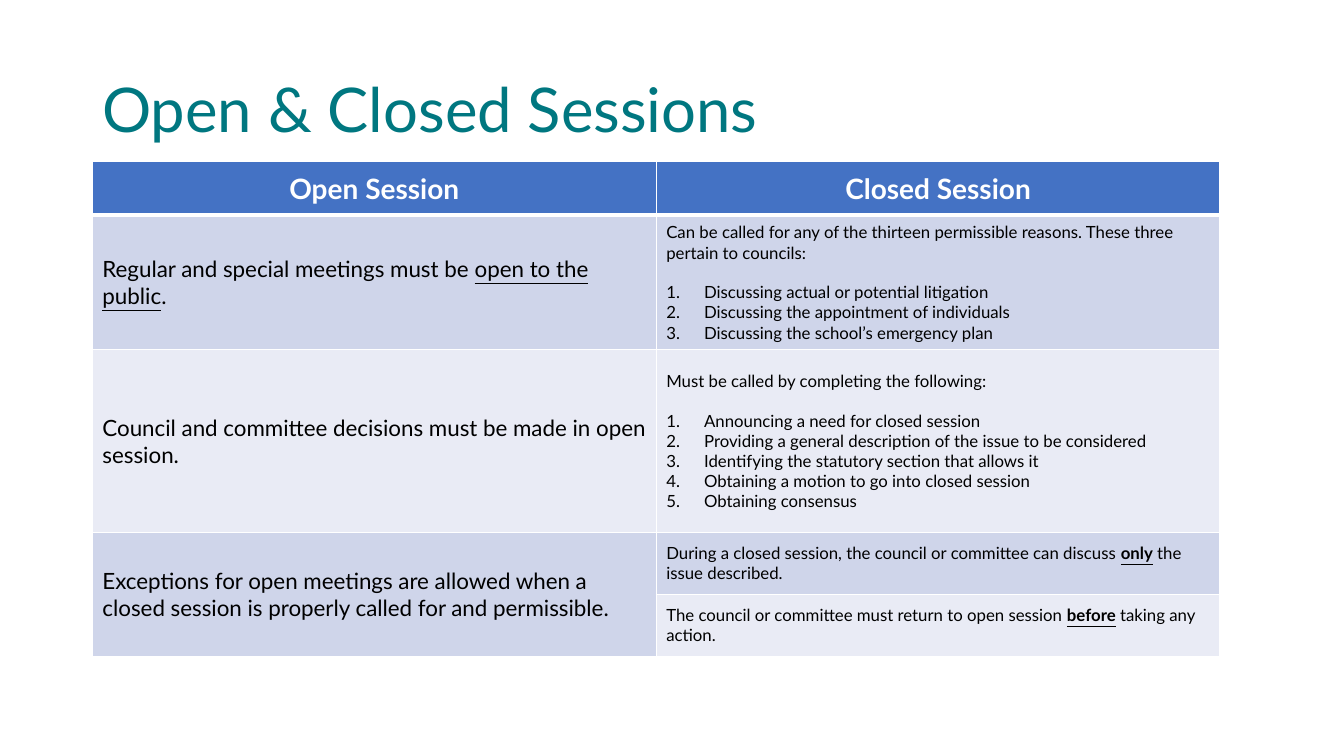
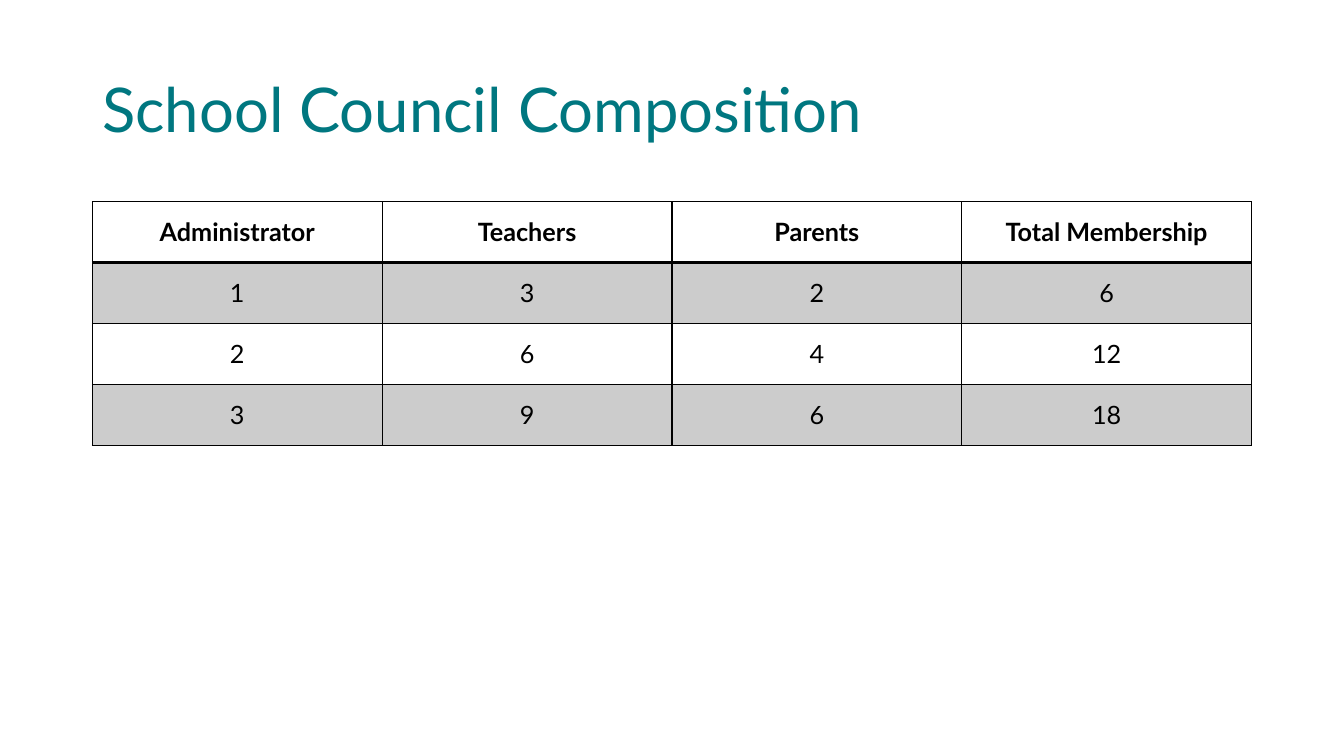
from dataclasses import dataclass

from lxml.etree import SubElement
from pptx import Presentation
from pptx.dml.color import RGBColor
from pptx.enum.text import MSO_VERTICAL_ANCHOR as Anchor, PP_PARAGRAPH_ALIGNMENT as Align
from pptx.oxml.ns import qn
from pptx.util import Pt

SCALE = 9525


@dataclass(frozen=True)
class Theme:
    """Hold the colours, typeface and type sizes."""
    font: str = "Lato"
    teal: str = "007780"
    black: str = "000000"
    white: str = "FFFFFF"
    header: str = "4472C4"
    band_dark: str = "CFD5EA"
    band_light: str = "E9EBF5"
    title_size: int = 44
    header_size: int = 20
    figure_size: int = 18
    lead_size: int = 16
    detail_size: int = 12
    list_gap: int = 14
    grid_line: int = 1


THEME = Theme()
SLIDE = (1280, 720)
TITLE_BOX = (88, 38, 1104, 139)
SESSION_BOX = (88, 154, 1074, 471)
COUNCIL_BOX = (88, 192, 1104, 234)
LIST_INDENT = 36
UNDERLINE = {"underline": True}
STRONG = {"bold": True, "underline": True}

SESSION_HEADER = ("Open Session", "Closed Session")
SESSION_HEIGHTS = (51, 128, 174, 59, 59)
OPEN_RULES = (
    [("Regular and special meetings must be ", {}), ("open to the public", UNDERLINE), (".", {})],
    [("Council and committee decisions must be made in open session.", {})],
    [("Exceptions for open meetings are allowed when a closed session is "
      "properly called for and permissible.", {})],
)
CLOSED_RULES = (
    ([("Can be called for any of the thirteen permissible reasons. "
       "These three pertain to councils:", {})],
     ["Discussing actual or potential litigation",
      "Discussing the appointment of individuals",
      "Discussing the school’s emergency plan"]),
    ([("Must be called by completing the following:", {})],
     ["Announcing a need for closed session",
      "Providing a general description of the issue to be considered",
      "Identifying the statutory section that allows it",
      "Obtaining a motion to go into closed session",
      "Obtaining consensus"]),
    ([("During a closed session, the council or committee can discuss ", {}),
      ("only", STRONG), (" the issue described.", {})], []),
    ([("The council or committee must return to open session ", {}),
      ("before", STRONG), (" taking any action.", {})], []),
)
COUNCIL_ROWS = (
    ("Administrator", "Teachers", "Parents", "Total Membership"),
    ("1", "3", "2", "6"),
    ("2", "6", "4", "12"),
    ("3", "9", "6", "18"),
)


def px(length):
    """Turn px into EMU."""
    return length * SCALE


def set_formats(target, formats):
    """Set each attribute of the target from a dict."""
    for name, value in formats.items():
        setattr(target, name, value)


def write_runs(paragraph, runs, size, color, **formats):
    """Write (text, formats) runs into a paragraph."""
    base = {"name": THEME.font, "size": Pt(size), "bold": False}
    for text, extra in runs:
        run = paragraph.add_run()
        run.text = text
        set_formats(run.font, {**base, **formats, **extra})
        run.font.color.rgb = RGBColor.from_string(color)


def write_numbered(frame, items, size, color):
    """Add a numbered list under the first paragraph."""
    for index, item in enumerate(items):
        paragraph = frame.add_paragraph()
        properties = paragraph._p.get_or_add_pPr()
        properties.set("marL", str(px(LIST_INDENT)))
        properties.set("indent", str(-px(LIST_INDENT)))
        SubElement(properties, qn("a:buFont"), typeface="+mj-lt")
        SubElement(properties, qn("a:buAutoNum"), type="arabicPeriod")
        if index == 0:
            paragraph.space_before = Pt(THEME.list_gap)
        write_runs(paragraph, [(item, {})], size, color)


def draw_borders(cell, color, top, bottom):
    """Draw the four borders of a cell."""
    properties = cell._tc.get_or_add_tcPr()
    widths = {"lnL": THEME.grid_line, "lnR": THEME.grid_line, "lnT": top, "lnB": bottom}
    for tag, width in widths.items():
        line = SubElement(properties, qn(f"a:{tag}"), w=str(Pt(width)))
        SubElement(SubElement(line, qn("a:solidFill")), qn("a:srgbClr"), val=color)


def fill_cell(cell, color, opacity=100):
    """Fill a cell, or leave it clear when there is no colour."""
    if color is None:
        cell.fill.background()
        return
    cell.fill.solid()
    cell.fill.fore_color.rgb = RGBColor.from_string(color)
    if opacity < 100:
        tint = cell._tc.tcPr.find(f"{qn('a:solidFill')}/{qn('a:srgbClr')}")
        SubElement(tint, qn("a:alpha"), val=str(opacity * 1000))


def add_grid(slide, box, heights, columns, line_color, header_line):
    """Add a bordered table with equal columns in the box."""
    left, top, width, height = map(px, box)
    table = slide.shapes.add_table(len(heights), columns, left, top, width, height).table
    for column in table.columns:
        column.width = width // columns
    for index, (row, row_height) in enumerate(zip(table.rows, heights)):
        row.height = px(row_height)
        for cell in row.cells:
            cell.vertical_anchor = Anchor.MIDDLE
            draw_borders(cell, line_color,
                         header_line if index == 1 else THEME.grid_line,
                         header_line if index == 0 else THEME.grid_line)
    return table


def write_centered(cell, text, size, color, bold):
    """Write one centred line in a cell."""
    paragraph = cell.text_frame.paragraphs[0]
    paragraph.alignment = Align.CENTER
    write_runs(paragraph, [(text, {})], size, color, bold=bold)


def add_title(slide, box, text):
    """Add the slide title in the box."""
    frame = slide.shapes.add_textbox(*map(px, box)).text_frame
    set_formats(frame, {"word_wrap": True, "vertical_anchor": Anchor.MIDDLE})
    paragraph = frame.paragraphs[0]
    paragraph.line_spacing = 0.9
    write_runs(paragraph, [(text, {})], THEME.title_size, THEME.teal)


def add_session_table(slide, box):
    """Compare open and closed sessions in the box."""
    table = add_grid(slide, box, SESSION_HEIGHTS, 2, THEME.white, 3)
    for column, heading in enumerate(SESSION_HEADER):
        cell = table.cell(0, column)
        fill_cell(cell, THEME.header)
        write_centered(cell, heading, THEME.header_size, THEME.white, True)
    for row, (intro, items) in enumerate(CLOSED_RULES, 1):
        band = THEME.band_dark if row % 2 else THEME.band_light
        fill_cell(table.cell(row, 0), band)
        cell = table.cell(row, 1)
        fill_cell(cell, band)
        write_runs(cell.text_frame.paragraphs[0], intro, THEME.detail_size, THEME.black)
        write_numbered(cell.text_frame, items, THEME.detail_size, THEME.black)
    last_rule = len(OPEN_RULES)
    table.cell(last_rule, 0).merge(table.cell(len(CLOSED_RULES), 0))
    for row, runs in enumerate(OPEN_RULES, 1):
        paragraph = table.cell(row, 0).text_frame.paragraphs[0]
        write_runs(paragraph, runs, THEME.lead_size, THEME.black)


def add_council_table(slide, box):
    """Show the council sizes in the box."""
    count = len(COUNCIL_ROWS)
    heights = [box[3] // count] * count
    table = add_grid(slide, box, heights, len(COUNCIL_ROWS[0]), THEME.black, 2)
    for row, texts in enumerate(COUNCIL_ROWS):
        for column, text in enumerate(texts):
            cell = table.cell(row, column)
            fill_cell(cell, THEME.black if row % 2 else None, 20)
            write_centered(cell, text, THEME.figure_size, THEME.black, row == 0)


def main():
    """Build and save the presentation."""
    presentation = Presentation()
    width, height = map(px, SLIDE)
    set_formats(presentation, {"slide_width": width, "slide_height": height})
    pages = (
        ("Open & Closed Sessions", add_session_table, SESSION_BOX),
        ("School Council Composition", add_council_table, COUNCIL_BOX),
    )
    for title, add_table, box in pages:
        slide = presentation.slides.add_slide(presentation.slide_layouts[6])
        add_title(slide, TITLE_BOX, title)
        add_table(slide, box)
    presentation.save("out.pptx")


if __name__ == "__main__":
    main()
